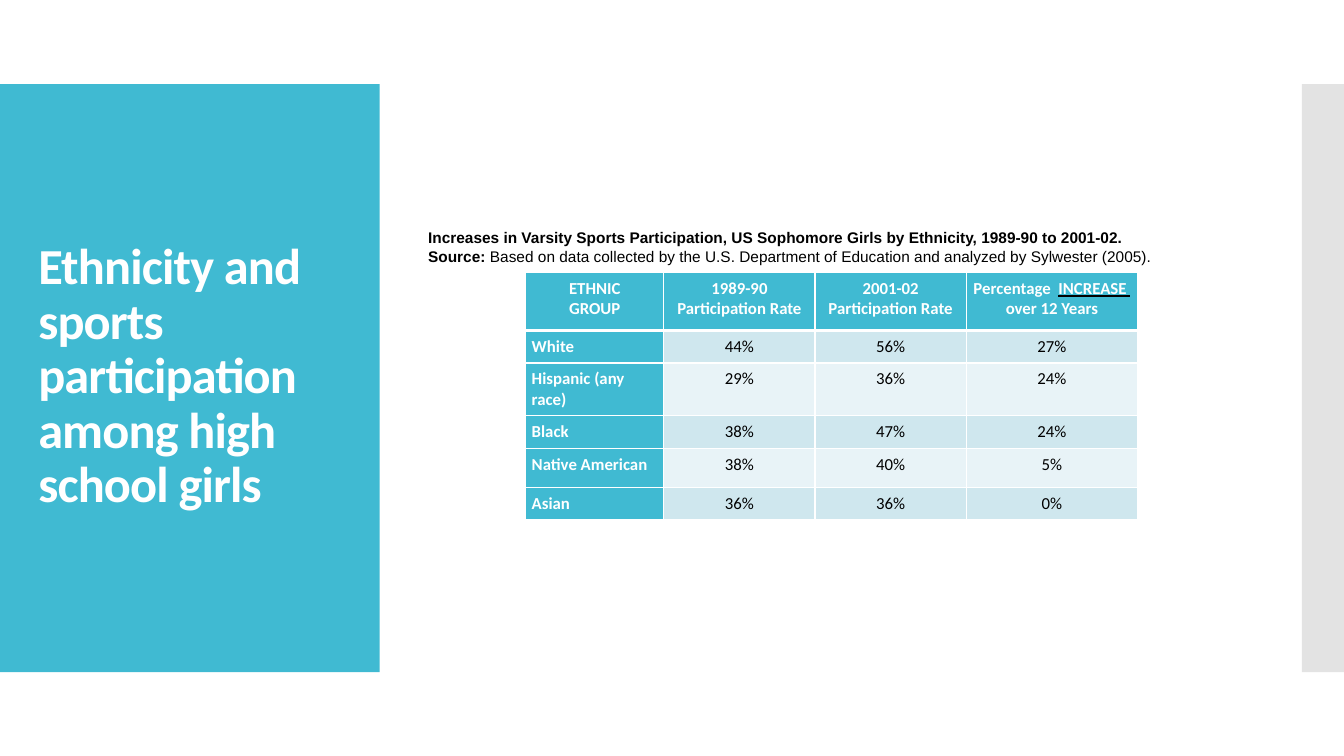
from lxml.etree import SubElement
from pptx import Presentation
from pptx.dml.color import RGBColor
from pptx.enum.shapes import MSO_SHAPE
from pptx.enum.text import MSO_ANCHOR, MSO_AUTO_SIZE, PP_ALIGN
from pptx.oxml import parse_xml
from pptx.oxml.ns import nsdecls, qn
from pptx.util import Cm, Pt

COLORS = {
    "teal": "40BAD2",
    "gray": "C8C8C8",
    "odd_row": "CFE7EE",
    "even_row": "E8F3F7",
    "white": "FFFFFF",
    "black": "000000",
}

TITLE = "Ethnicity and sports participation among high school girls"
CAPTION = "Increases in Varsity Sports Participation, US Sophomore Girls by Ethnicity, 1989-90 to 2001-02."
SOURCE = " Based on data collected by the U.S. Department of Education and analyzed by Sylwester (2005)."

# Each header cell is a list of lines, each line a list of (text, underlined).
HEADERS = [
    [[("ETHNIC", False)], [("GROUP", False)]],
    [[("1989-90", False)], [("Participation Rate", False)]],
    [[("2001-02", False)], [("Participation Rate", False)]],
    [[("Percentage  ", False), ("INCREASE ", True)], [("over 12 Years", False)]],
]
RATES = [
    ("White", "44%", "56%", "27%"),
    ("Hispanic (any race)", "29%", "36%", "24%"),
    ("Black", "38%", "47%", "24%"),
    ("Native American", "38%", "40%", "5%"),
    ("Asian", "36%", "36%", "0%"),
]
COLUMN_WIDTHS = [3.48, 3.81, 3.81, 4.32]
ROW_HEIGHTS = [1.47, 0.81, 1.31, 0.81, 0.99, 0.81]


def color(name):
    return RGBColor.from_string(COLORS[name])


def add_text(para, text, size=12, font="Calibri", ink="black", bold=False, underline=False):
    span = para.add_run()
    span.text = text
    span.font.size = Pt(size)
    span.font.bold = bold
    span.font.color.rgb = color(ink)
    span.font.name = font
    if underline:
        span.font.underline = True
        span.font._element.find(qn("a:latin")).addprevious(parse_xml(
            f'<a:uFill {nsdecls("a")}><a:solidFill>'
            f'<a:srgbClr val="{COLORS["black"]}"/></a:solidFill></a:uFill>'))
    return span


def add_panel(page, left, width, fill, opacity=100):
    """Place a plain band behind everything already on the page."""
    panel = page.shapes.add_shape(MSO_SHAPE.RECTANGLE, Cm(left), Cm(2.12), Cm(width), Cm(14.82))
    panel.shadow.inherit = False
    panel.fill.solid()
    panel.fill.fore_color.rgb = color(fill)
    panel.line.fill.background()
    if opacity < 100:
        paint = panel._element.spPr.find(qn("a:solidFill"))[0]
        SubElement(paint, qn("a:alpha"), val=str(opacity * 1000))
    page.shapes._spTree.insert(2, panel._element)


def fill_title(page):
    title = page.shapes.title
    title.left, title.top, title.width, title.height = Cm(0.71), Cm(3.12), Cm(8.18), Cm(12.78)
    frame = title.text_frame
    frame.auto_size = MSO_AUTO_SIZE.NONE
    frame.word_wrap = True
    frame.vertical_anchor = MSO_ANCHOR.MIDDLE
    para = frame.paragraphs[0]
    para.alignment = PP_ALIGN.LEFT
    para.line_spacing = 0.9
    span = add_text(para, TITLE, size=36, ink="white", bold=True)
    span.font._element.set("spc", "-60")


def add_caption(page):
    box = page.shapes.add_textbox(Cm(10.54), Cm(5.59), Cm(21.8), Cm(1.27))
    frame = box.text_frame
    frame.word_wrap = True
    frame.vertical_anchor = MSO_ANCHOR.MIDDLE
    add_text(frame.paragraphs[0], CAPTION, size=11, font="Arial", bold=True)
    source = frame.add_paragraph()
    add_text(source, "Source:", size=11, font="Arial", bold=True)
    add_text(source, SOURCE, size=11, font="Arial")


def set_borders(cell, top, bottom):
    properties = cell._tc.get_or_add_tcPr()
    widths = {"lnL": 1, "lnR": 1, "lnT": top, "lnB": bottom}
    for position, (side, points) in enumerate(widths.items()):
        properties.insert(position, parse_xml(
            f'<a:{side} {nsdecls("a")} w="{Pt(points)}"><a:solidFill>'
            f'<a:srgbClr val="{COLORS["white"]}"/></a:solidFill></a:{side}>'))


def format_cell(cell, lines, fill, centered, **text_format):
    cell.margin_left = cell.margin_right = cell.margin_top = cell.margin_bottom = Cm(0.15)
    cell.fill.solid()
    cell.fill.fore_color.rgb = color(fill)
    frame = cell.text_frame
    for number, line in enumerate(lines):
        para = frame.add_paragraph() if number else frame.paragraphs[0]
        para.alignment = PP_ALIGN.CENTER if centered else PP_ALIGN.LEFT
        for text, underline in line:
            add_text(para, text, underline=underline, **text_format)


def add_rates_table(page):
    rows, columns = len(ROW_HEIGHTS), len(COLUMN_WIDTHS)
    table = page.shapes.add_table(rows, columns, Cm(13.25), Cm(6.86),
                                  Cm(sum(COLUMN_WIDTHS)), Cm(sum(ROW_HEIGHTS))).table
    table.first_col = True
    for column, width in zip(table.columns, COLUMN_WIDTHS):
        column.width = Cm(width)
    for row, height in zip(table.rows, ROW_HEIGHTS):
        row.height = Cm(height)

    cells = [HEADERS] + [[[[(text, False)]] for text in rates] for rates in RATES]
    for row, contents in enumerate(cells):
        for column, lines in enumerate(contents):
            heading = row == 0 or column == 0
            band = "odd_row" if row % 2 else "even_row"
            cell = table.cell(row, column)
            format_cell(cell, lines, "teal" if heading else band,
                        centered=row == 0 or column > 0,
                        ink="white" if heading else "black", bold=heading)
            set_borders(cell, top=3 if row == 1 else 1, bottom=3 if row == 0 else 1)


def main():
    deck = Presentation()
    deck.slide_width, deck.slide_height = Cm(33.87), Cm(19.05)
    page = deck.slides.add_slide(deck.slide_layouts[5])
    fill_title(page)
    add_panel(page, 32.81, 1.06, "gray", opacity=50)
    add_panel(page, 0, 9.57, "teal")
    add_rates_table(page)
    add_caption(page)
    deck.save("out.pptx")


if __name__ == "__main__":
    main()
